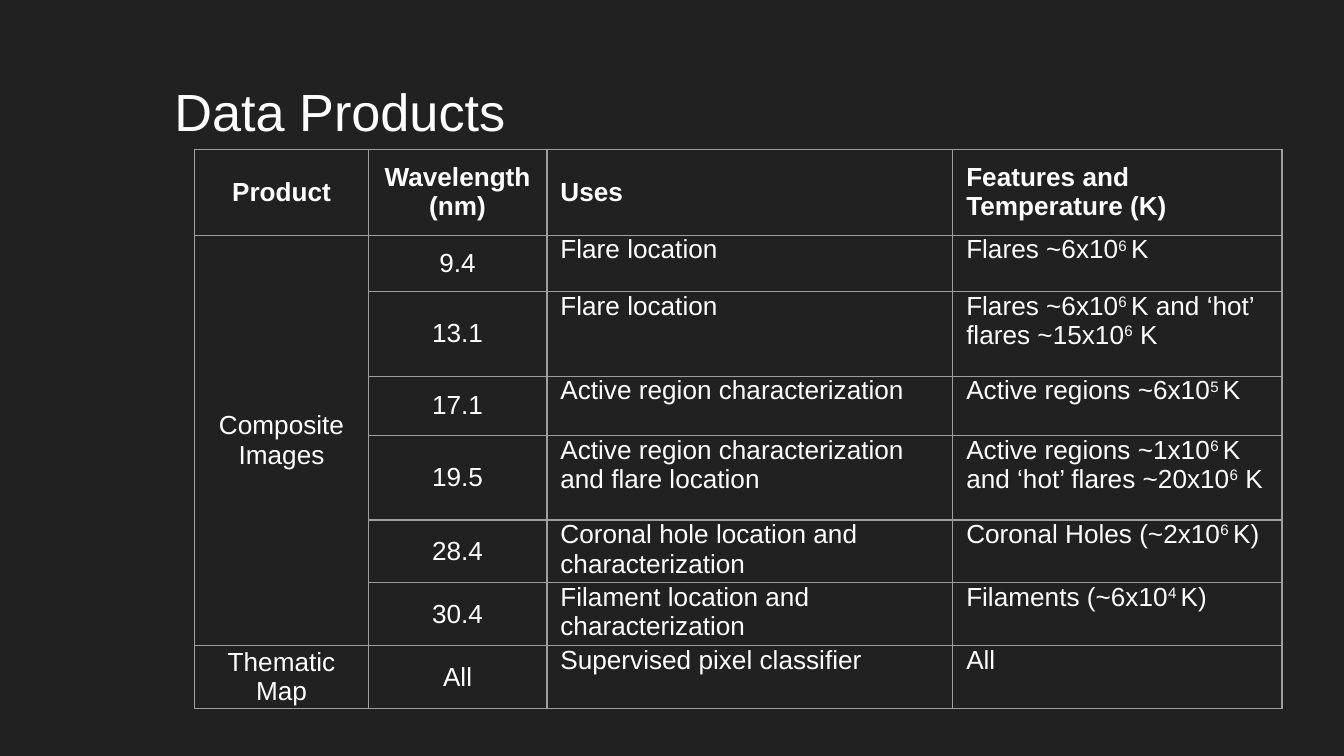
from typing import NamedTuple

from lxml.etree import SubElement
from pptx import Presentation
from pptx.dml.color import RGBColor
from pptx.enum.text import MSO_ANCHOR as Anchor, PP_ALIGN as Align
from pptx.oxml.ns import qn
from pptx.util import Emu, Inches, Pt

WIDTH = Inches(10)
HEIGHT = Emu(WIDTH * 9 // 16)
FONT = "Arial"
BACKGROUND, TEXT, BORDER = "212121", "FFFFFF", "9E9E9E"
COLUMN_WIDTHS = (1.29, 1.33, 3.02, 2.45)
ROW_HEIGHTS = (0.64, 0.42, 0.63, 0.44, 0.63, 0.42, 0.42, 0.42)
FRAME_SIZE = Inches(3.28)
CENTRED_COLUMNS = 2


class Row(NamedTuple):
    """One table row; text between carets is superscript."""
    product: str
    wavelength: str
    uses: str
    features: str


ROWS = (
    Row("Product", "Wavelength\n(nm)", "Uses", "Features and Temperature (K)"),
    Row("Composite Images", "9.4", "Flare location", "Flares ~6x10^6 ^K"),
    Row("", "13.1", "Flare location",
        "Flares ~6x10^6 ^K and ‘hot’ flares ~15x10^6^ K"),
    Row("", "17.1", "Active region characterization",
        "Active regions ~6x10^5 ^K"),
    Row("", "19.5", "Active region characterization and flare location",
        "Active regions ~1x10^6 ^K and ‘hot’ flares ~20x10^6^ K"),
    Row("", "28.4", "Coronal hole location and characterization",
        "Coronal Holes (~2x10^6 ^K)"),
    Row("", "30.4", "Filament location and characterization",
        "Filaments (~6x10^4 ^K)"),
    Row("Thematic Map", "All", "Supervised pixel classifier", "All"),
)


def color(value: str) -> RGBColor:
    return RGBColor.from_string(value)


def add_run(para, text: str, size: float, bold: bool = False):
    run = para.add_run()
    run.text = text
    run.font.name, run.font.size, run.font.bold = FONT, Pt(size), bold
    run.font.color.rgb = color(TEXT)
    return run


def add_title(slide, text: str) -> None:
    box = slide.shapes.add_textbox(Emu(int(WIDTH * 0.12)), Inches(0.49),
                                   Inches(8.46), Inches(0.63))
    frame = box.text_frame
    frame.word_wrap = True
    frame.margin_left = frame.margin_right = Inches(0.1)
    frame.margin_top = frame.margin_bottom = Inches(0.1)
    add_run(frame.paragraphs[0], text, 28)


def style_cell(cell) -> None:
    """Clear the fill and draw a thin line on all four sides."""
    properties = cell._tc.get_or_add_tcPr()
    for side in ("a:lnL", "a:lnR", "a:lnT", "a:lnB"):
        line = SubElement(properties, qn(side), w=str(Pt(0.75)))
        fill = SubElement(line, qn("a:solidFill"))
        SubElement(fill, qn("a:srgbClr"), val=BORDER)
    cell.fill.background()
    cell.margin_left = cell.margin_right = Inches(0.1)
    cell.margin_top = cell.margin_bottom = 0


def write_cell(cell, text: str, bold: bool, centred: bool) -> None:
    cell.vertical_anchor = Anchor.MIDDLE if bold or centred else Anchor.TOP
    frame = cell.text_frame
    for index, line in enumerate(text.split("\n")):
        para = frame.add_paragraph() if index else frame.paragraphs[0]
        para.alignment = Align.CENTER if centred else Align.LEFT
        for position, part in enumerate(line.split("^")):
            run = add_run(para, part, 14, bold)
            if position % 2:
                run._r.get_or_add_rPr().set("baseline", "30000")


def add_products_table(slide) -> None:
    frame = slide.shapes.add_table(
        len(ROWS), len(COLUMN_WIDTHS), Inches(1.45), Inches(1.11),
        FRAME_SIZE, FRAME_SIZE)
    table = frame.table
    table.first_row = table.horz_banding = False
    for column, width in zip(table.columns, COLUMN_WIDTHS):
        column.width = Inches(width)
    for row, height in zip(table.rows, ROW_HEIGHTS):
        row.height = Inches(height)
    frame.width = frame.height = FRAME_SIZE
    table.cell(1, 0).merge(table.cell(len(ROWS) - 2, 0))
    for row_index, row in enumerate(ROWS):
        for column_index, text in enumerate(row):
            cell = table.cell(row_index, column_index)
            style_cell(cell)
            if text:
                write_cell(cell, text, row_index == 0,
                           column_index < CENTRED_COLUMNS)


def main() -> None:
    deck = Presentation()
    deck.slide_width, deck.slide_height = WIDTH, HEIGHT
    slide = deck.slides.add_slide(deck.slide_layouts[6])
    slide.background.fill.solid()
    slide.background.fill.fore_color.rgb = color(BACKGROUND)
    add_title(slide, "Data Products")
    add_products_table(slide)
    deck.save("out.pptx")


if __name__ == "__main__":
    main()
